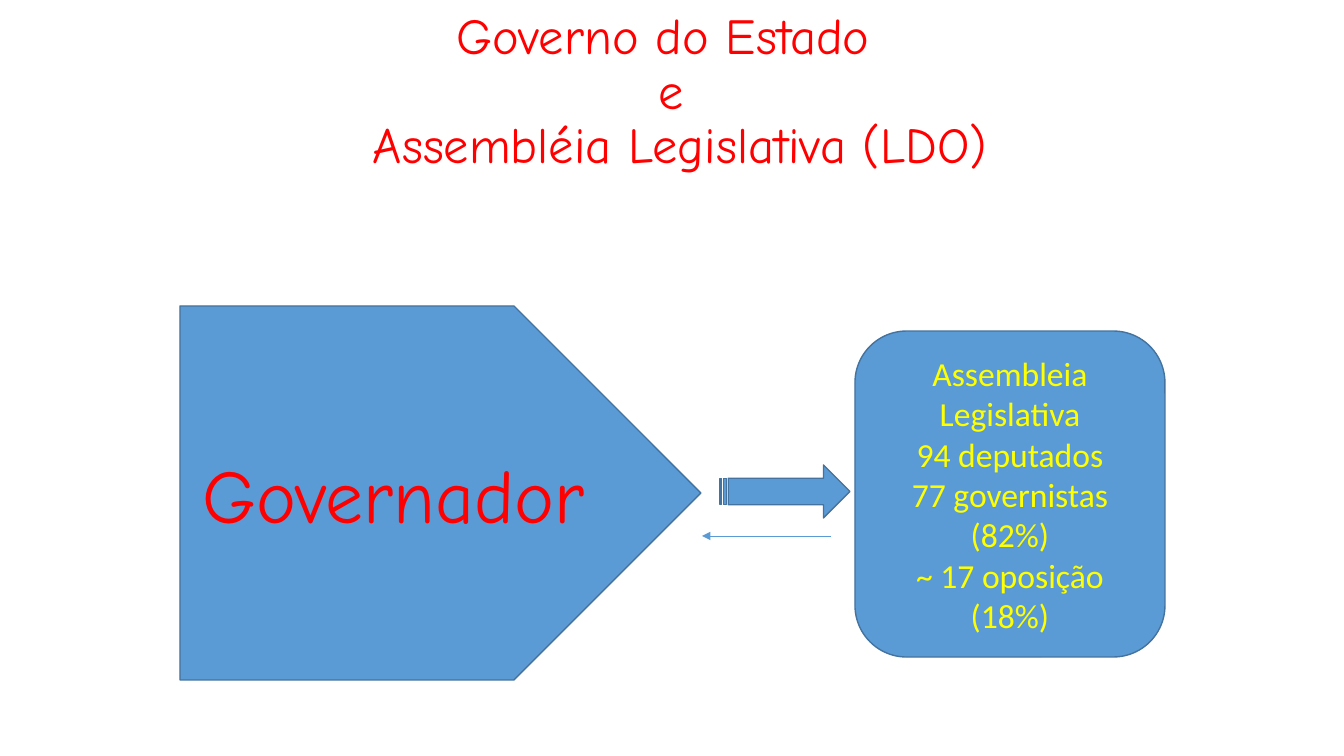
import pptx
import pptx.dml.color
import pptx.enum.shapes
import pptx.enum.text
import pptx.oxml
import pptx.oxml.ns
import pptx.util

EMU_PER_PX = 914400 / 100.8
SHAPES = pptx.enum.shapes.MSO_SHAPE
BLUE, EDGE = "5B9BD5", "43739E"
RED, YELLOW = "FF0000", "FFFF00"


def px(*lengths):
    return [pptx.util.Emu(round(n * EMU_PER_PX)) for n in lengths]


def rgb(value):
    return pptx.dml.color.RGBColor.from_string(value)


def write(tf, paragraphs, size, color, font="Calibri", spacing=1.0):
    tf.word_wrap = True
    tf.vertical_anchor = pptx.enum.text.MSO_ANCHOR.MIDDLE
    for i, lines in enumerate(paragraphs):
        p = tf.paragraphs[0] if i == 0 else tf.add_paragraph()
        p.alignment = pptx.enum.text.PP_ALIGN.CENTER
        p.line_spacing = spacing
        for j, line in enumerate(lines.split("\n")):
            if j:
                p.add_line_break()
            r = p.add_run()
            r.text = line
            r.font.name = font
            r.font.size = pptx.util.Pt(size)
            r.font.color.rgb = rgb(color)
        for br in p._p.findall(pptx.oxml.ns.qn("a:br")):
            rpr = br.makeelement(pptx.oxml.ns.qn("a:rPr"), {"sz": str(size * 100)})
            br.append(rpr)


def add_title(slide, box, text, **style):
    sp = slide.shapes.add_textbox(*px(*box))
    write(sp.text_frame, [text], **style)


def add_block(slide, kind, box, paragraphs=(), **style):
    sp = slide.shapes.add_shape(kind, *px(*box))
    sp.shadow.inherit = False
    sp.fill.solid()
    sp.fill.fore_color.rgb = rgb(BLUE)
    sp.line.color.rgb = rgb(EDGE)
    sp.line.width = pptx.util.Pt(1)
    if paragraphs:
        write(sp.text_frame, paragraphs, **style)


def add_arrow(slide, x1, y1, x2, y2):
    line = slide.shapes.add_connector(
        pptx.enum.shapes.MSO_CONNECTOR.STRAIGHT, *px(x1, y1, x2, y2))
    line.line.color.rgb = rgb(BLUE)
    line.line.width = pptx.util.Pt(0.5)
    sppr = line._element.spPr
    ln = sppr.find(pptx.oxml.ns.qn("a:ln"))
    ln.append(ln.makeelement(pptx.oxml.ns.qn("a:tailEnd"), {"type": "triangle"}))
    sppr.append(sppr.makeelement(pptx.oxml.ns.qn("a:effectLst"), {}))


def main():
    prs = pptx.Presentation()
    prs.slide_width, prs.slide_height = px(1344, 756)
    slide = prs.slides.add_slide(prs.slide_layouts[6])

    add_title(slide, (237, 0, 869, 186),
              "Governo do Estado \ne\n Assembléia Legislativa (LDO)",
              size=36, color=RED, font="Comic Neue", spacing=0.9)
    add_block(slide, SHAPES.PENTAGON, (180, 306, 521, 374), ["Governador"],
              size=54, color=RED, font="Comic Neue")
    add_block(slide, SHAPES.ROUNDED_RECTANGLE, (855, 331, 310, 326),
              ["Assembleia", "Legislativa", "94 deputados",
               "77 governistas (82%)", "~ 17 oposição", "(18%)"],
              size=24, color=YELLOW)
    add_block(slide, SHAPES.STRIPED_RIGHT_ARROW, (720, 465, 130, 53))
    add_arrow(slide, 831, 536, 702, 536)

    prs.save("out.pptx")


if __name__ == "__main__":
    main()
